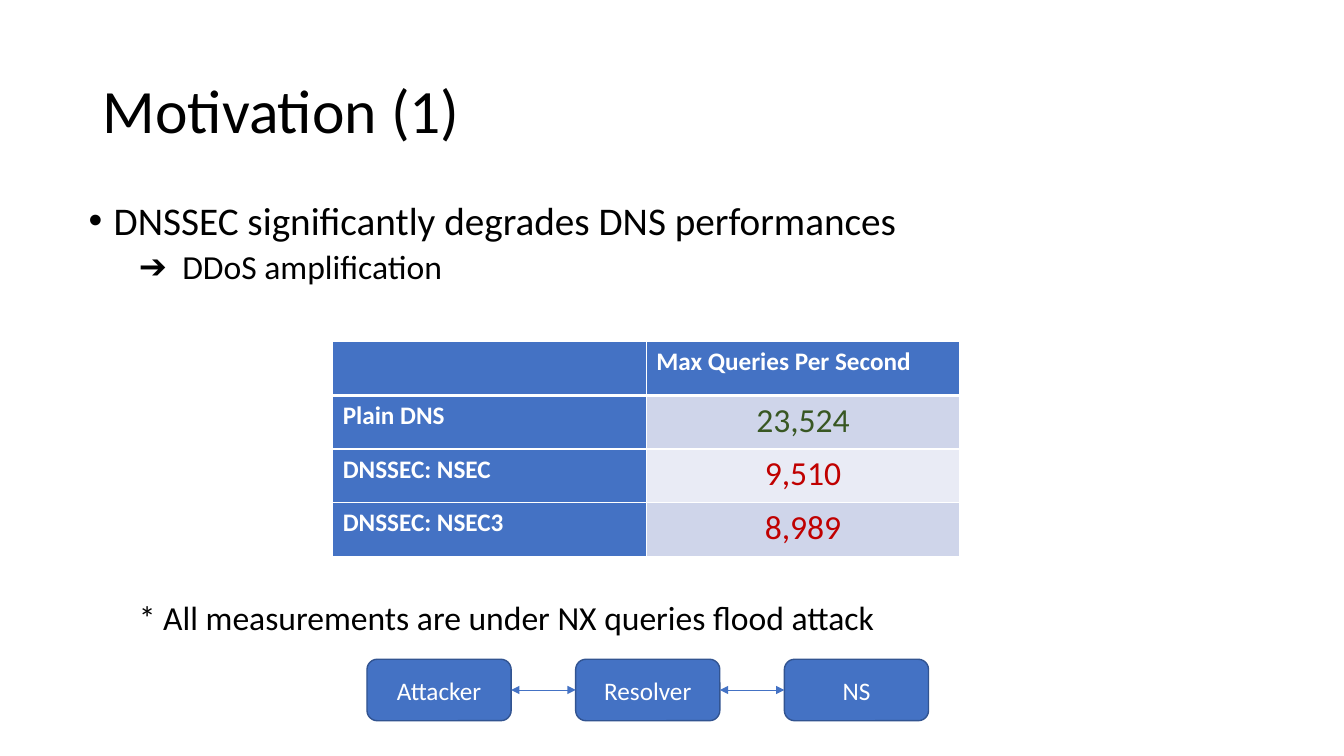
import pptx
import pptx.util
import pptx.dml.color
import pptx.enum.shapes
import pptx.enum.text
import pptx.oxml
import pptx.oxml.ns

Inches = pptx.util.Inches
Pt = pptx.util.Pt
ALIGN = pptx.enum.text.PP_ALIGN
ANCHOR = pptx.enum.text.MSO_ANCHOR

BLUE = "4472C4"
WHITE = "FFFFFF"
BANDS = ["CFD5EA", "E9EBF5"]
RESULTS = [
    ("Plain DNS", "23,524", "385723"),
    ("DNSSEC: NSEC", "9,510", "C00000"),
    ("DNSSEC: NSEC3", "8,989", "C00000"),
]
HOSTS = ["Attacker", "Resolver", "NS"]


def rgb(value):
    return pptx.dml.color.RGBColor.from_string(value)


def add_child(parent, tag, **attributes):
    child = pptx.oxml.parse_xml(f"<a:{tag} {pptx.oxml.ns.nsdecls('a')}/>")
    for name, value in attributes.items():
        child.set(name, str(value))
    parent.append(child)
    return child


def add_run(p, text, size, color="000000", bold=False):
    r = p.add_run()
    r.text = text
    r.font.name = "Calibri"
    r.font.size = Pt(size)
    r.font.bold = bold
    r.font.color.rgb = rgb(color)


def add_text(s, left, top, width, height, anchor=ANCHOR.TOP):
    tf = s.shapes.add_textbox(Inches(left), Inches(top), Inches(width), Inches(height)).text_frame
    tf.word_wrap = True
    tf.vertical_anchor = anchor
    tf.paragraphs[0].line_spacing = 0.9
    return tf


def set_indent(p, margin, first=0, bullet=None):
    pPr = p._p.get_or_add_pPr()
    pPr.set("marL", str(Inches(margin)))
    pPr.set("indent", str(Inches(first)))
    if bullet:
        add_child(pPr, "buFont", typeface="Arial")
        add_child(pPr, "buChar", char=bullet)


def style_cell(cell, fill, top=1, bottom=1):
    tcPr = cell._tc.get_or_add_tcPr()
    for side, width in (("L", 1), ("R", 1), ("T", top), ("B", bottom)):
        ln = add_child(tcPr, f"ln{side}", w=Pt(width))
        add_child(add_child(ln, "solidFill"), "srgbClr", val=WHITE)
    cell.fill.solid()
    cell.fill.fore_color.rgb = rgb(fill)


def add_results_table(s):
    table = s.shapes.add_table(len(RESULTS) + 1, 2, Inches(3.3), Inches(3.39), Inches(6.22), Inches(2.13)).table
    for cell in table.rows[0].cells:
        style_cell(cell, BLUE, bottom=3)
    add_run(table.cell(0, 1).text_frame.paragraphs[0], "Max Queries Per Second", 18, WHITE, True)
    for i, (label, value, color) in enumerate(RESULTS):
        name_cell, value_cell = table.rows[i + 1].cells
        top = 3 if i == 0 else 1
        style_cell(name_cell, BLUE, top)
        style_cell(value_cell, BANDS[i % 2], top)
        add_run(name_cell.text_frame.paragraphs[0], label, 18, WHITE, True)
        p = value_cell.text_frame.paragraphs[0]
        p.alignment = ALIGN.CENTER
        add_run(p, value, 24, color)


def add_host(s, left, label):
    sp = s.shapes.add_shape(
        pptx.enum.shapes.MSO_SHAPE.ROUNDED_RECTANGLE, Inches(left), Inches(6.54), Inches(1.43), Inches(0.61)
    )
    sp.shadow.inherit = False
    sp.fill.solid()
    sp.fill.fore_color.rgb = rgb(BLUE)
    sp.line.color.rgb = rgb("325491")
    sp.line.width = Pt(1)
    tf = sp.text_frame
    tf.vertical_anchor = ANCHOR.MIDDLE
    p = tf.paragraphs[0]
    p.alignment = ALIGN.CENTER
    add_run(p, label, 18, WHITE)
    return sp


def add_link(s, start, end):
    link = s.shapes.add_connector(pptx.enum.shapes.MSO_CONNECTOR.STRAIGHT, 0, 0, 0, 0)
    link.begin_connect(start, 3)
    link.end_connect(end, 1)
    link.line.color.rgb = rgb(BLUE)
    link.line.width = Pt(0.5)
    ln = link.line._get_or_add_ln()
    for tag in ("headEnd", "tailEnd"):
        add_child(ln, tag, type="triangle")
    add_child(link._element.spPr, "effectLst")


def main():
    prs = pptx.Presentation()
    prs.slide_width = Inches(13.33)
    prs.slide_height = Inches(7.5)
    s = prs.slides.add_slide(prs.slide_layouts[6])

    tf = add_text(s, 0.92, 0.4, 11.5, 1.45, ANCHOR.MIDDLE)
    add_run(tf.paragraphs[0], "Motivation (1)", 44)

    tf = add_text(s, 0.78, 1.95, 11.5, 1)
    p = tf.paragraphs[0]
    set_indent(p, 0.25, -0.25, "•")
    add_run(p, "DNSSEC significantly degrades DNS performances", 28)
    p = tf.add_paragraph()
    p.line_spacing = 0.9
    p.space_before = Pt(5)
    set_indent(p, 0.93, -0.43, "➔")
    add_run(p, "DDoS amplification", 24)

    add_results_table(s)

    tf = add_text(s, 0.78, 5.92, 11.5, 0.5)
    set_indent(tf.paragraphs[0], 0.5)
    add_run(tf.paragraphs[0], "* All measurements are under NX queries flood attack", 24)

    hosts = [add_host(s, 3.64 + 2.07 * i, label) for i, label in enumerate(HOSTS)]
    for start, end in zip(hosts, hosts[1:]):
        add_link(s, start, end)

    prs.save("out.pptx")


if __name__ == "__main__":
    main()
